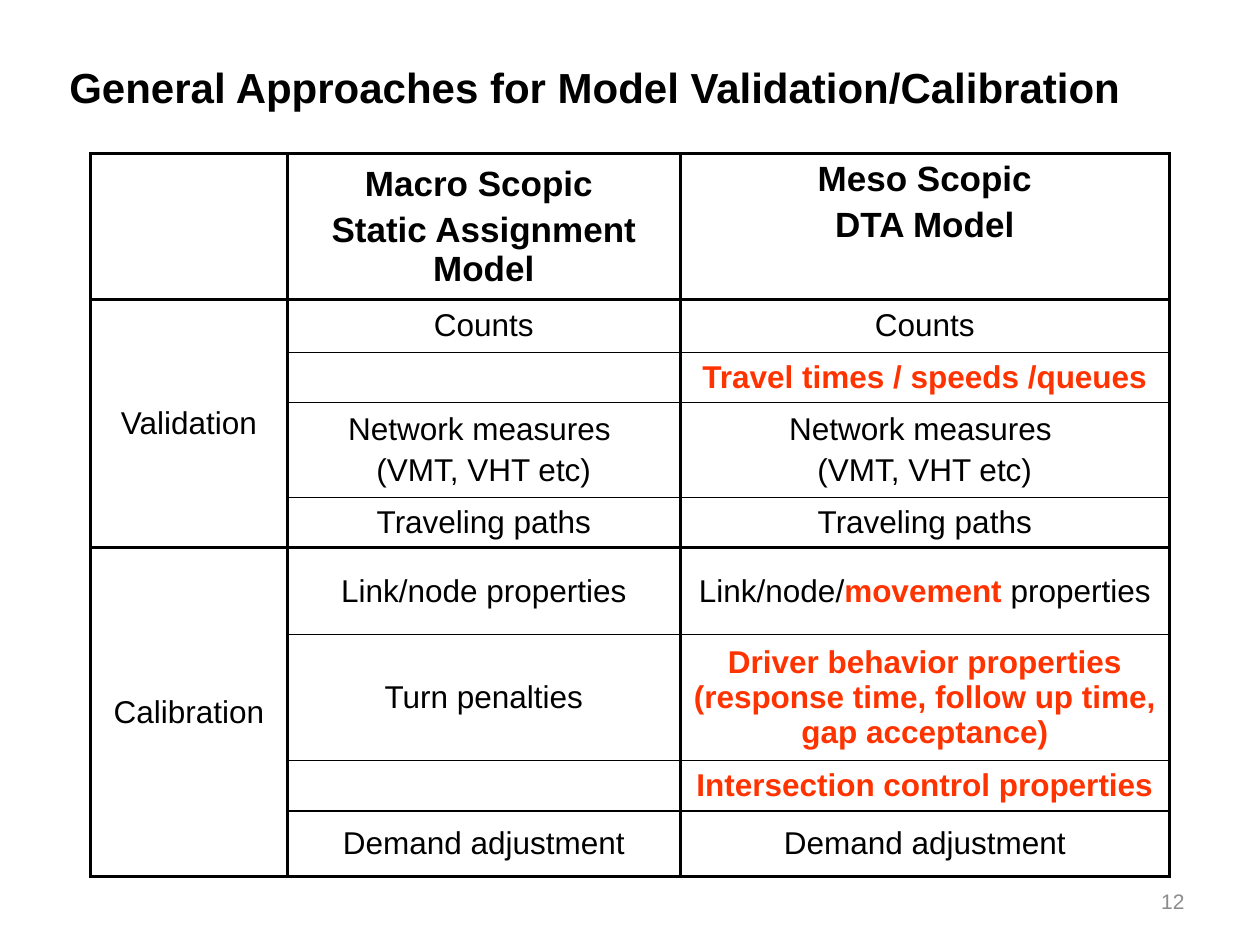
"""Build the slide that compares model validation and calibration approaches."""
from lxml.etree import SubElement
from pptx import Presentation
from pptx.dml.color import RGBColor
from pptx.enum.text import MSO_ANCHOR as Anchor, MSO_AUTO_SIZE as AutoSize, PP_ALIGN as Align
from pptx.oxml.ns import qn
from pptx.util import Inches, Pt

BLACK, RED, WHITE, GREY = "000000", "FF3300", "FFFFFF", "8C8C8C"
THICK, THIN = 2.25, 1


def write(frame, text, size=18, color=BLACK, bold=False, align=Align.CENTER, accent=None):
    """Write one paragraph per line, with the accent word in bold red."""
    for number, line in enumerate(text.split("\n")):
        para = frame.add_paragraph() if number else frame.paragraphs[0]
        para.alignment = align
        para.space_before = Pt(0.2 * size if number else 0)
        before, word, after = line.partition(accent) if accent else (line, "", "")
        for part, shade, heavy in ((before, color, bold), (word, RED, True), (after, color, bold)):
            if part:
                span = para.add_run()
                span.text = part
                span.font.name = "Arial"
                span.font.size = Pt(size)
                span.font.bold = heavy
                span.font.color.rgb = RGBColor.from_string(shade)


def add_borders(cell, **widths):
    """Draw black cell borders with the given widths in points."""
    properties = cell._tc.get_or_add_tcPr()
    for side in ("L", "R", "T", "B"):
        line = SubElement(properties, qn(f"a:ln{side}"), w=str(Pt(widths[side])))
        fill = SubElement(line, qn("a:solidFill"))
        SubElement(fill, qn("a:srgbClr"), val=BLACK)


deck = Presentation()
deck.slide_width, deck.slide_height = Inches(10), Inches(7.5)
page = deck.slides.add_slide(deck.slide_layouts[5])

title = page.shapes.title
title.left, title.top, title.width, title.height = map(Inches, (0.45, 0.44, 8.64, 0.5))
title.text_frame.word_wrap = False
title.text_frame.auto_size = AutoSize.SHAPE_TO_FIT_TEXT
title.text_frame.vertical_anchor = Anchor.TOP
write(title.text_frame, "General Approaches for Model Validation/Calibration",
      size=24, bold=True, align=Align.LEFT)

header = dict(size=20, bold=True)
red = dict(color=RED, bold=True)
network = "Network measures \n(VMT, VHT etc)"
rows = [
    (1.15, "", "Macro Scopic \nStatic Assignment Model", "Meso Scopic\nDTA Model", header),
    (0.42, "Validation", "Counts", "Counts", {}),
    (0.4, "", "", "Travel times / speeds /queues", red),
    (0.75, "", network, network, {}),
    (0.4, "", "Traveling paths", "Traveling paths", {}),
    (0.69, "Calibration", "Link/node properties", "Link/node/movement properties",
     dict(accent="movement")),
    (1, "", "Turn penalties",
     "Driver behavior properties (response time, follow up time, gap acceptance)", red),
    (0.4, "", "", "Intersection control properties", red),
    (0.52, "", "Demand adjustment", "Demand adjustment", {}),
]
column_widths = (1.56, 3.12, 3.88)
group_ends = (0, 4, 8)

table = page.shapes.add_table(
    len(rows), len(column_widths), Inches(0.72), Inches(1.22),
    Inches(sum(column_widths)), Inches(sum(row[0] for row in rows))).table
table.first_row = table.horz_banding = False
for column, width in zip(table.columns, column_widths):
    column.width = Inches(width)

for row_index, (height, *texts, meso_format) in enumerate(rows):
    table.rows[row_index].height = Inches(height)
    for column_index, text in enumerate(texts):
        cell = table.cell(row_index, column_index)
        add_borders(
            cell, L=THICK, R=THICK,
            T=THICK if column_index == 0 or row_index - 1 in (-1, *group_ends) else THIN,
            B=THICK if column_index == 0 or row_index in group_ends else THIN)
        cell.fill.solid()
        cell.fill.fore_color.rgb = RGBColor.from_string(WHITE)
        is_meso_header = row_index == 0 and column_index == 2
        cell.vertical_anchor = Anchor.TOP if is_meso_header else Anchor.MIDDLE
        if text:
            styled = column_index == 2 or row_index == 0
            write(cell.text_frame, text, **(meso_format if styled else {}))

for first, last in ((1, 4), (5, 8)):
    table.cell(first, 0).merge(table.cell(last, 0))

number_box = page.shapes.add_textbox(Inches(7.17), Inches(6.95), Inches(2.33), Inches(0.4))
number_box.text_frame.word_wrap = True
number_box.text_frame.vertical_anchor = Anchor.MIDDLE
write(number_box.text_frame, "12", size=12, color=GREY, align=Align.RIGHT)

deck.save("out.pptx")
